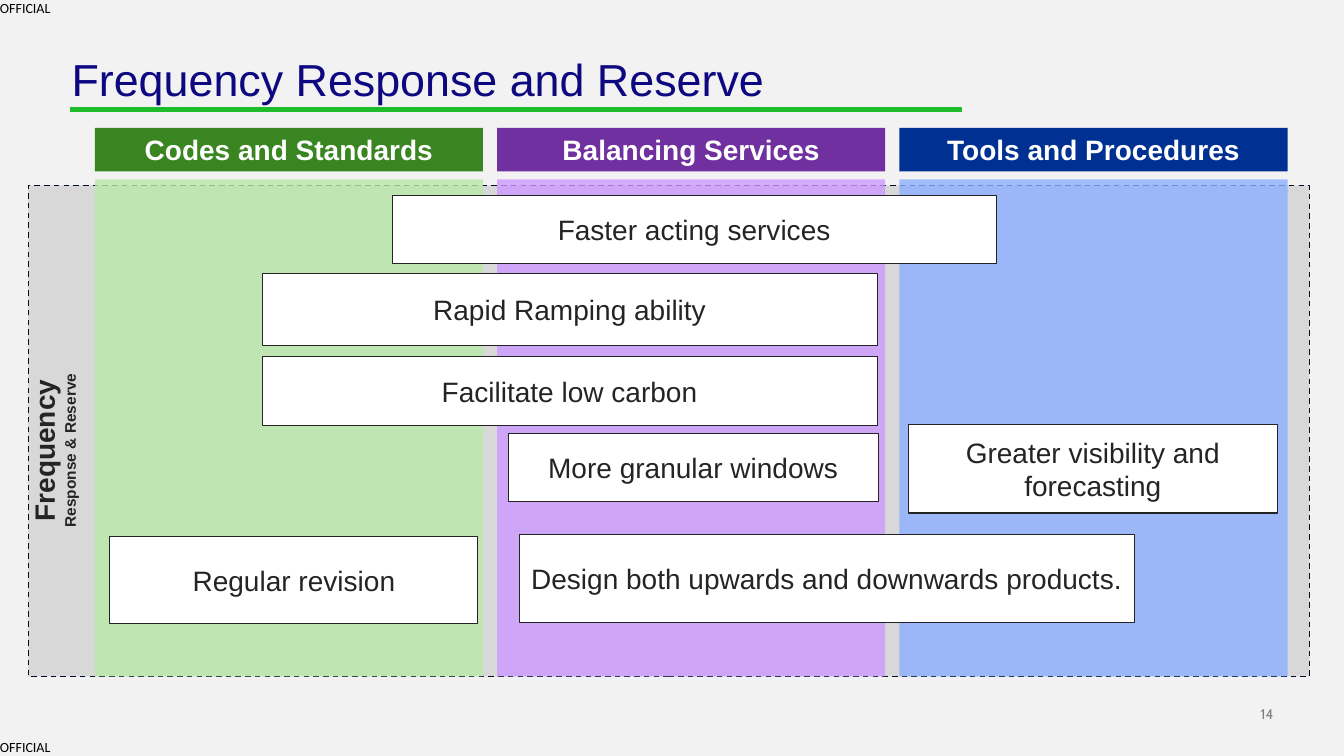
from dataclasses import dataclass

from lxml.etree import SubElement
from pptx import Presentation
from pptx.dml.color import RGBColor
from pptx.enum.dml import MSO_LINE
from pptx.enum.shapes import MSO_SHAPE
from pptx.enum.text import MSO_ANCHOR, MSO_AUTO_SIZE, PP_ALIGN
from pptx.oxml.ns import qn
from pptx.util import Inches, Pt


@dataclass(frozen=True)
class Theme:
    """Hold the colours, fonts and type sizes of the slide."""
    back: str = "F2F2F2"
    title: str = "0D0780"
    rule: str = "1CBC2B"
    board: str = "D8D8D8"
    edge: str = "000D27"
    ink: str = "242424"
    white: str = "FFFFFF"
    black: str = "000000"
    grey: str = "7F7F7F"
    font: str = "Arial"
    mark: str = "Calibri"
    page: str = "Cabin"
    head: int = 32
    text: int = 20
    note: int = 11
    tiny: int = 10


THEME = Theme()
COLUMNS = [
    ("Codes and Standards", "398521", "B9E9AA"),
    ("Balancing Services", "7030A0", "CC99FF"),
    ("Tools and Procedures", "003192", "8CAFFF"),
]
CARDS = [
    ("Faster acting services", 3.61, 0.1, 5.99, 0.67),
    ("Rapid Ramping ability", 2.32, 0.87, 6.1, 0.72),
    ("Facilitate low carbon", 2.32, 1.7, 6.1, 0.68),
    ("More granular windows", 4.76, 2.46, 3.67, 0.68),
    ("Design both upwards and downwards products.", 4.87, 3.46, 6.1, 0.88),
    ("Greater visibility and forecasting", 8.73, 2.37, 3.66, 0.88),
    ("Regular revision", 0.81, 3.48, 3.65, 0.87),
]


def apply(item, values):
    """Set each named attribute of an item."""
    for name, value in values.items():
        setattr(item, name, value)


def style(para, color, size, font=THEME.font, bold=False, align=PP_ALIGN.CENTER):
    """Format one paragraph."""
    para.alignment = align
    apply(para.font, {"name": font, "size": Pt(size), "bold": bold})
    para.font.color.rgb = RGBColor.from_string(color)


def rect(slide, box, fill, line=None, width=0.75):
    """Add a plain rectangle."""
    shape = slide.shapes.add_shape(MSO_SHAPE.RECTANGLE, *map(Inches, box))
    shape.shadow.inherit = False
    shape.fill.solid()
    shape.fill.fore_color.rgb = RGBColor.from_string(fill)
    if line:
        shape.line.color.rgb = RGBColor.from_string(line)
        shape.line.width = Pt(width)
    else:
        shape.line.fill.background()
    return shape


def label(shape, text, color, bold=False):
    """Write centred text in a rectangle."""
    frame = shape.text_frame
    apply(frame, {"text": text, "word_wrap": True,
                  "vertical_anchor": MSO_ANCHOR.MIDDLE})
    style(frame.paragraphs[0], color, THEME.text, bold=bold)


def flush(frame, wrap, anchor=MSO_ANCHOR.TOP):
    """Remove the margins of a text frame."""
    apply(frame, {"margin_left": 0, "margin_right": 0, "margin_top": 0,
                  "margin_bottom": 0, "word_wrap": wrap,
                  "vertical_anchor": anchor, "auto_size": MSO_AUTO_SIZE.NONE})


def header(slide, box):
    """Place the title and the rule beneath it."""
    left, top, width, height = box
    title = slide.shapes.title
    names = ("left", "top", "width", "height")
    apply(title, dict(zip(names, map(Inches, box))))
    title.text_frame.text = "Frequency Response and Reserve"
    flush(title.text_frame, True)
    para = title.text_frame.paragraphs[0]
    style(para, THEME.title, THEME.head, align=PP_ALIGN.LEFT)
    para.line_spacing = 0.9
    rule = (left - 0.01, top + height + 0.02, width - 0.02, 0.04)
    rect(slide, rule, THEME.rule, THEME.rule)


def margin(slide, box, text, font, color, align):
    """Place a small text at the edge of the slide."""
    frame = slide.shapes.add_textbox(*map(Inches, box)).text_frame
    frame.text = text
    flush(frame, False)
    style(frame.paragraphs[0], color, THEME.tiny, font, align=align)


def side(slide, box):
    """Place the turned label centred on the given box."""
    left, top, width, height = box
    turned = (left + (width - height) / 2, top + (height - width) / 2,
              height, width)
    shape = slide.shapes.add_textbox(*map(Inches, turned))
    shape.rotation = 270
    frame = shape.text_frame
    apply(frame, {"text": "Frequency\nResponse & Reserve", "word_wrap": True,
                  "vertical_anchor": MSO_ANCHOR.MIDDLE})
    for para, size in zip(frame.paragraphs, (THEME.text, THEME.note)):
        style(para, THEME.ink, size, bold=True)


def column(slide, box, name, dark, pale):
    """Place a heading over a translucent panel."""
    left, top, width, height = box
    label(rect(slide, (left, top, width, 0.43), dark), name, THEME.white, True)
    panel = rect(slide, (left, top + 0.51, width, height - 0.51), pale)
    tint = next(panel.element.iter(qn("a:srgbClr")))
    SubElement(tint, qn("a:alpha"), val="80000")


def board(slide, box):
    """Place the dashed board with its columns and cards."""
    left, top, width, height = box
    base = rect(slide, box, THEME.board, THEME.edge, 1)
    base.line.dash_style = MSO_LINE.DASH
    side(slide, (left - 0.12, top + 0.39, 0.73, 4.48))
    for index, item in enumerate(COLUMNS):
        place = (left + 0.66 + 3.99 * index, top - 0.57, 3.85, height + 0.57)
        column(slide, place, *item)
    for text, across, down, wide, high in CARDS:
        card = (left + across, top + down, wide, high)
        label(rect(slide, card, THEME.white, THEME.ink), text, THEME.ink)


def main():
    """Build and save the slide."""
    deck = Presentation()
    apply(deck, {"slide_width": Inches(13.33), "slide_height": Inches(7.5)})
    slide = deck.slides.add_slide(deck.slide_layouts[5])
    slide.background.fill.solid()
    slide.background.fill.fore_color.rgb = RGBColor.from_string(THEME.back)
    margin(slide, (12.21, 7, 0.42, 0.17), "14", THEME.page, THEME.grey,
           PP_ALIGN.RIGHT)
    for top in (0, 7.33):
        margin(slide, (0, top, 0.53, 0.17), "OFFICIAL", THEME.mark,
               THEME.black, PP_ALIGN.LEFT)
    header(slide, (0.71, 0.57, 8.86, 0.48))
    board(slide, (0.28, 1.84, 12.71, 4.87))
    deck.save("out.pptx")


if __name__ == "__main__":
    main()
